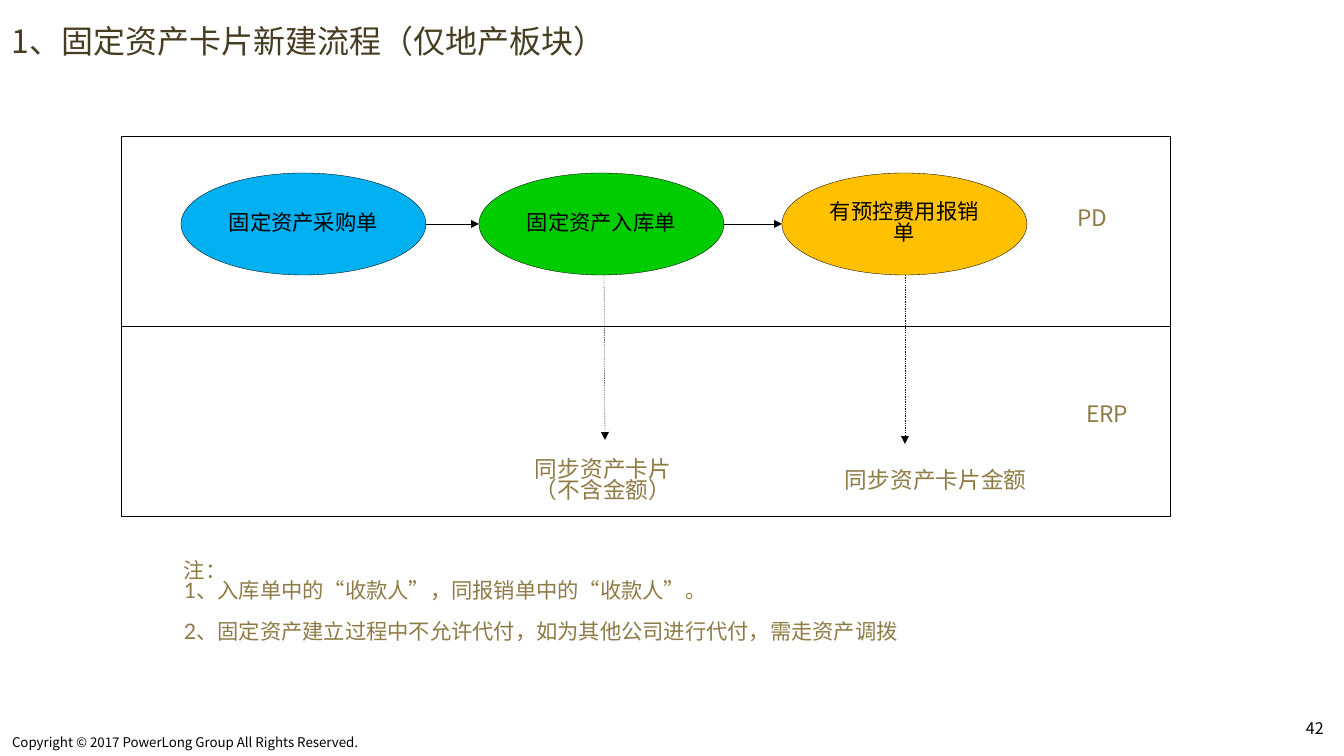
from dataclasses import dataclass

from lxml import etree
from pptx import Presentation
from pptx.dml.color import RGBColor
from pptx.enum.dml import MSO_LINE
from pptx.enum.shapes import MSO_CONNECTOR, MSO_SHAPE
from pptx.enum.text import MSO_ANCHOR, PP_ALIGN
from pptx.oxml.ns import qn
from pptx.util import Pt

EMU_PER_PX = 9525
RECTANGLE, ELLIPSE = MSO_SHAPE.RECTANGLE, MSO_SHAPE.OVAL
TOP, MIDDLE = MSO_ANCHOR.TOP, MSO_ANCHOR.MIDDLE
LEFT, CENTER = PP_ALIGN.LEFT, PP_ALIGN.CENTER
STRAIGHT, DASH = MSO_CONNECTOR.STRAIGHT, MSO_LINE.DASH

CJK_FONT = "Noto Sans CJK SC"
BLACK, WHITE, BROWN, GOLD = "000000", "FFFFFF", "473D22", "8E7B45"
STEP_TOP, STEP_WIDTH, STEP_HEIGHT = 173, 245, 102
LANE_LEFT, LANE_TOP, LANE_WIDTH, LANE_HEIGHT = 121, 136, 1049, 190


@dataclass
class Step:
    left: int
    color: str
    text: str


@dataclass
class Label:
    left: int
    top: int
    width: int
    height: int
    lines: list[str]
    size: int = 17
    color: str = GOLD
    font: str = CJK_FONT
    anchor: MSO_ANCHOR = MIDDLE
    margins: tuple[int, int] = (10, 5)
    spacing: float = 0.8
    wrap: bool = True
    last_space: int = 0


@dataclass
class Arrow:
    start: tuple[int, int]
    end: tuple[int, int]
    dashed: bool = False


STEPS = [
    Step(181, "00B0F0", "固定资产采购单"),
    Step(479, "00CC00", "固定资产入库单"),
    Step(782, "FFC000", "有预控费用报销单"),
]
LABELS = [
    Label(0, 0, 1344, 82, ["1、固定资产卡片新建流程（仅地产板块）"], 24, BROWN,
          margins=(12, 6), spacing=1),
    Label(525, 436, 179, 91, ["同步资产卡片（不含金额）"]),
    Label(835, 436, 204, 91, ["同步资产卡片金额"]),
    Label(1067, 200, 76, 40, ["PD"]),
    Label(1076, 396, 76, 40, ["ERP"]),
    Label(174, 557, 742, 92,
          ["注：",
           "1、入库单中的“收款人”，同报销单中的“收款人”。",
           "2、固定资产建立过程中不允许代付，如为其他公司进行代付，需走资产调拨"],
          16, font="Lato", anchor=TOP, wrap=False, last_space=15),
    Label(0, 731, 473, 25, ["Copyright © 2017 PowerLong Group All Rights Reserved."],
          10, BLACK, anchor=TOP, margins=(12, 6)),
    Label(1296, 717, 48, 38, ["42"], 12, BLACK, anchor=TOP),
]


def px(value: int) -> int:
    return value * EMU_PER_PX


def rgb(color: str) -> RGBColor:
    return RGBColor.from_string(color)


def write(paragraph, text: str, size: int, color: str, font: str, spacing: float) -> None:
    paragraph.line_spacing = spacing
    run = paragraph.add_run()
    run.text = text
    for name, value in {"size": Pt(size), "name": font}.items():
        setattr(run.font, name, value)
    run.font.color.rgb = rgb(color)
    east_asian = etree.SubElement(run.font._element, qn("a:ea"))
    east_asian.set("typeface", CJK_FONT)


def add_outlined(slide, kind, left: int, top: int, width: int, height: int, color: str):
    shape = slide.shapes.add_shape(kind, px(left), px(top), px(width), px(height))
    shape.shadow.inherit = False
    shape.fill.solid()
    shape.fill.fore_color.rgb = rgb(color)
    shape.line.color.rgb = rgb(BLACK)
    shape.line.width = Pt(0.25)
    return shape


def add_step(slide, step: Step) -> None:
    shape = add_outlined(slide, ELLIPSE, step.left, STEP_TOP, STEP_WIDTH, STEP_HEIGHT, step.color)
    frame = shape.text_frame
    frame.word_wrap = True
    frame.vertical_anchor = MIDDLE
    paragraph = frame.paragraphs[0]
    paragraph.alignment = CENTER
    write(paragraph, step.text, 16, BLACK, "Arial", 0.8)


def add_label(slide, label: Label) -> None:
    box = slide.shapes.add_textbox(px(label.left), px(label.top), px(label.width), px(label.height))
    frame = box.text_frame
    side, edge = map(px, label.margins)
    frame_format = {
        "word_wrap": label.wrap, "vertical_anchor": label.anchor,
        "margin_left": side, "margin_right": side,
        "margin_top": edge, "margin_bottom": edge,
    }
    for name, value in frame_format.items():
        setattr(frame, name, value)
    for index, line in enumerate(label.lines):
        paragraph = frame.add_paragraph() if index else frame.paragraphs[0]
        paragraph.alignment = LEFT
        write(paragraph, line, label.size, label.color, label.font, label.spacing)
    if label.last_space:
        paragraph.space_before = Pt(label.last_space)


def add_arrow(slide, arrow: Arrow) -> None:
    connector = slide.shapes.add_connector(STRAIGHT, *map(px, arrow.start + arrow.end))
    connector.line.color.rgb = rgb(BLACK)
    connector.line.width = Pt(0.25)
    if arrow.dashed:
        connector.line.dash_style = DASH
    properties = connector._element.spPr
    head = etree.SubElement(properties.find(qn("a:ln")), qn("a:tailEnd"))
    head.set("type", "triangle")
    etree.SubElement(properties, qn("a:effectLst"))


def main() -> None:
    presentation = Presentation()
    presentation.slide_width, presentation.slide_height = px(1344), px(756)
    slide = presentation.slides.add_slide(presentation.slide_layouts[6])

    for lane in range(2):
        add_outlined(slide, RECTANGLE, LANE_LEFT, LANE_TOP + lane * LANE_HEIGHT,
                     LANE_WIDTH, LANE_HEIGHT, WHITE)

    middle = STEP_TOP + STEP_HEIGHT // 2
    arrows = [Arrow((step.left + STEP_WIDTH, middle), (following.left, middle))
              for step, following in zip(STEPS, STEPS[1:])]
    arrows += [Arrow((604, 268), (605, 440), True), Arrow((905, 275), (905, 444), True)]
    for arrow in arrows:
        add_arrow(slide, arrow)
    for step in STEPS:
        add_step(slide, step)
    for label in LABELS:
        add_label(slide, label)
    presentation.save("out.pptx")


if __name__ == "__main__":
    main()
